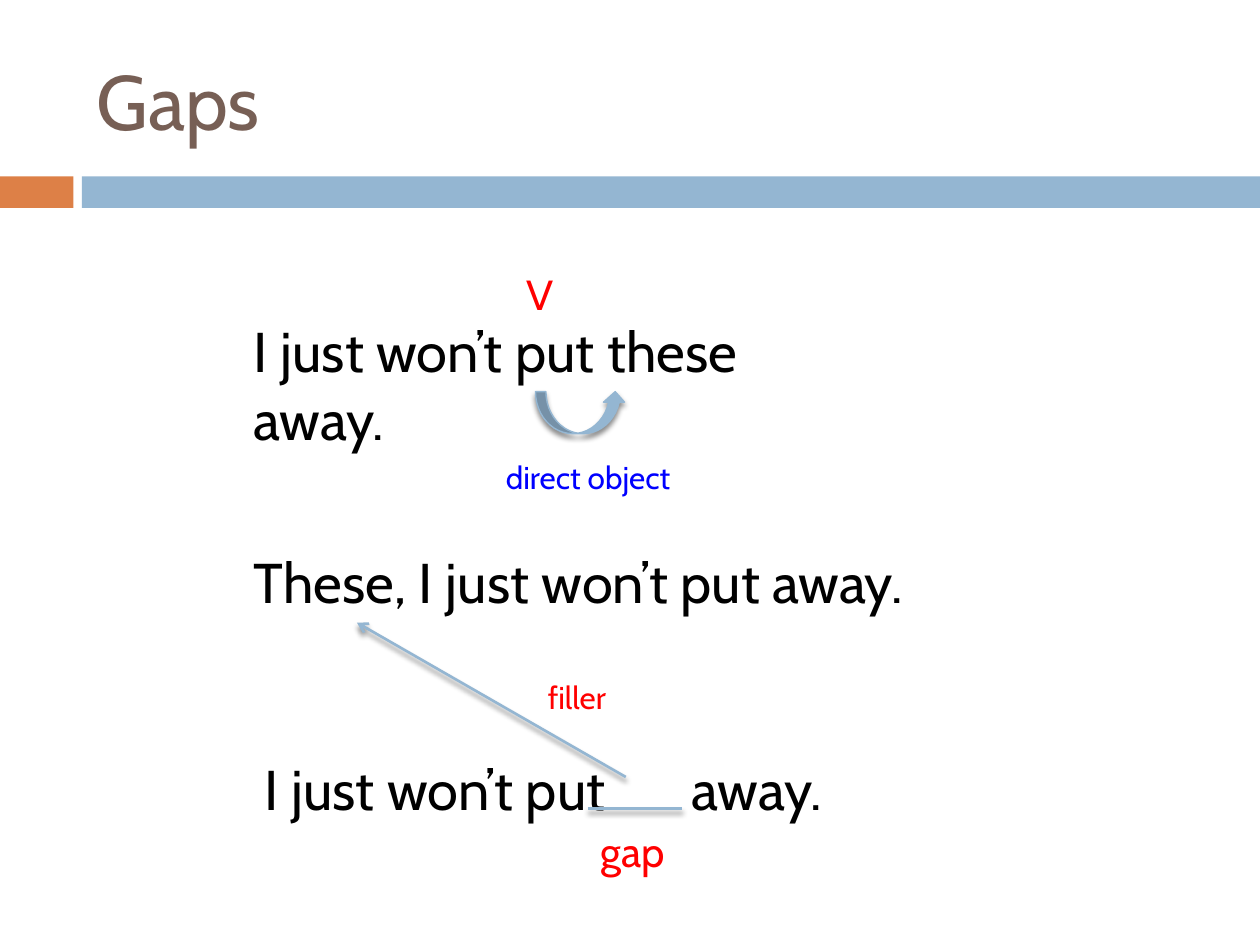
from dataclasses import dataclass

from lxml.etree import SubElement
from pptx import Presentation
from pptx.dml.color import RGBColor
from pptx.enum.shapes import MSO_CONNECTOR, MSO_SHAPE
from pptx.enum.text import MSO_ANCHOR
from pptx.oxml.ns import qn
from pptx.util import Inches, Pt


@dataclass(frozen=True)
class Theme:
    font: str = "Cabin"
    title: str = "775F55"
    accent: str = "DD8047"
    blue: str = "94B6D2"
    text: str = "000000"
    mark: str = "FF0000"
    role: str = "0000FF"
    title_size: int = 44
    sentence_size: int = 32
    label_size: int = 24
    note_size: int = 18


THEME = Theme()
CELLS = 12  # grid cells per inch: 120 columns by 90 rows


def grid(*cells):
    return [Inches(c / CELLS) for c in cells]


def add_text(s, text, box, size, color, anchor=MSO_ANCHOR.TOP, tab=None):
    tf = s.shapes.add_textbox(*grid(*box)).text_frame
    for name, value in {"word_wrap": True, "vertical_anchor": anchor}.items():
        setattr(tf, name, value)
    p = tf.paragraphs[0]
    if tab:
        tabs = SubElement(p._p.get_or_add_pPr(), qn("a:tabLst"))
        SubElement(tabs, qn("a:tab"), pos=str(grid(tab)[0]), algn="l")
    r = p.add_run()
    r.text = text
    for name, value in {"name": THEME.font, "size": Pt(size)}.items():
        setattr(r.font, name, value)
    r.font.color.rgb = RGBColor.from_string(color)


def add_soft_shadow(sp):
    effects = SubElement(sp._element.spPr, qn("a:effectLst"))
    shadow = SubElement(effects, qn("a:outerShdw"), blurRad=str(Pt(3)),
                        dist=str(Pt(2.4)), dir="5400000", rotWithShape="0")
    color = SubElement(shadow, qn("a:srgbClr"), val="000000")
    SubElement(color, qn("a:alpha"), val="45000")


def add_filled(s, kind, box, color):
    sp = s.shapes.add_shape(kind, *grid(*box))
    sp.fill.solid()
    sp.fill.fore_color.rgb = RGBColor.from_string(color)
    sp.line.fill.background()
    return sp


def add_bar(s, box, color):
    add_filled(s, MSO_SHAPE.RECTANGLE, box, color).shadow.inherit = False


def style_line(line, width):
    line.color.rgb = RGBColor.from_string(THEME.blue)
    line.width = Pt(width)


def add_object_arrow(s, box):
    sp = add_filled(s, MSO_SHAPE.CURVED_RIGHT_ARROW, box, THEME.blue)
    sp.rotation = 270
    style_line(sp.line, 0.79)
    add_soft_shadow(sp)


def add_line(s, start, end, arrow=False):
    cxn = s.shapes.add_connector(MSO_CONNECTOR.STRAIGHT, *grid(*start, *end))
    style_line(cxn.line, 1.5)
    if arrow:
        SubElement(cxn.line._get_or_add_ln(), qn("a:tailEnd"), type="arrow")
    add_soft_shadow(cxn)


def main():
    prs = Presentation()
    prs.slide_width, prs.slide_height = grid(120, 90)
    s = prs.slides.add_slide(prs.slide_layouts[6])
    t = THEME

    # Header band and title
    add_bar(s, (0, 16.8, 7, 3), t.accent)
    add_bar(s, (7.8, 16.8, 112.2, 3), t.blue)
    add_text(s, "Gaps", (8, 3, 107, 13), t.title_size, t.title, MSO_ANCHOR.MIDDLE)

    # Sentences; the last one leaves its gap with a tab stop
    for text, box, tab in (
        ("I just won’t put these away.", (23, 29.6, 60, 7.7), None),
        ("These, I just won’t put away.", (23, 51.6, 77, 7.7), None),
        ("I just won’t put\taway.", (24, 71.3, 77, 7.7), 40.7),
    ):
        add_text(s, text, box, t.sentence_size, t.text, tab=tab)

    # Verb and its direct object, gap and filler
    add_object_arrow(s, (53.3, 35, 4, 8.6))
    add_line(s, (56, 77), (65, 77))
    add_line(s, (59.6, 74), (34, 59.3), arrow=True)
    for text, box, size, color in (
        ("V", (49, 25, 9, 6), t.label_size, t.mark),
        ("direct object", (47, 43, 24, 5), t.note_size, t.role),
        ("gap", (56, 78, 21, 6), t.label_size, t.mark),
        ("filler", (51, 64, 11, 4.8), t.note_size, t.mark),
    ):
        add_text(s, text, box, size, color)

    prs.save("out.pptx")


if __name__ == "__main__":
    main()
